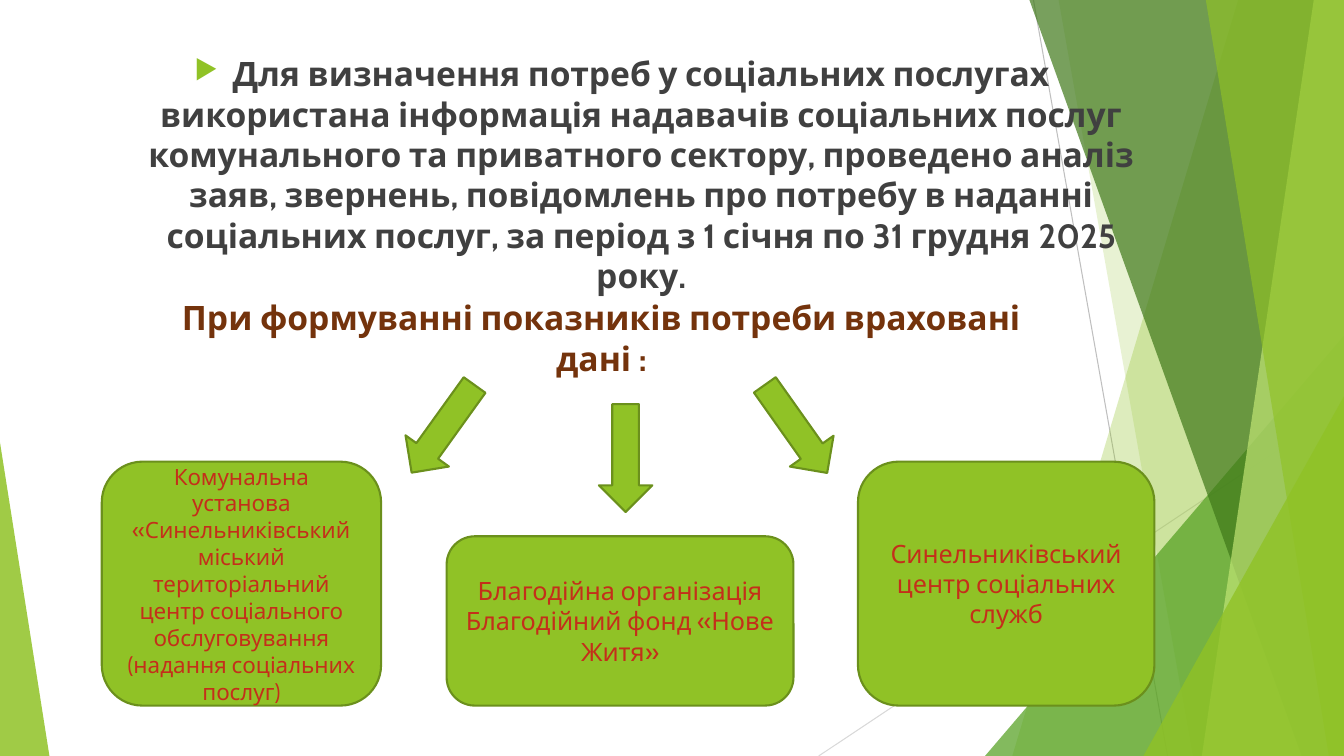
"""Builds a slide on the data sources used to assess social service needs."""
import pptx
import pptx.dml.color
import pptx.enum.shapes
import pptx.enum.text
import pptx.oxml
import pptx.oxml.ns
import pptx.util
from pptx.util import Inches

RGBColor = pptx.dml.color.RGBColor
MSO_SHAPE = pptx.enum.shapes.MSO_SHAPE
MSO_ANCHOR = pptx.enum.text.MSO_ANCHOR

GREEN = RGBColor(0x90, 0xC2, 0x26)
MID_GREEN = RGBColor(0x54, 0xA0, 0x21)
DARK_GREEN = RGBColor(0x3F, 0x78, 0x19)
PALE_GREEN = RGBColor(0xC0, 0xE4, 0x74)
OUTLINE = RGBColor(0x6B, 0x90, 0x1C)
GREY = RGBColor(0xBF, 0xBF, 0xBF)
LIGHT_GREY = RGBColor(0xD9, 0xD9, 0xD9)
BROWN = RGBColor(0x74, 0x33, 0x0C)
CHARCOAL = RGBColor(0x40, 0x40, 0x40)
RED = RGBColor(0xC4, 0x2F, 0x1A)

WIDTH, HEIGHT = 13.33, 7.5

deck = pptx.Presentation()
deck.slide_width, deck.slide_height = Inches(WIDTH), Inches(HEIGHT)
slide = deck.slides.add_slide(deck.slide_layouts[6])
shapes = slide.shapes


def write(holder, text, *, size, color, bold=False, anchor=MSO_ANCHOR.TOP):
    """Writes one centred paragraph and returns it."""
    frame = holder.text_frame
    frame.word_wrap = True
    frame.vertical_anchor = anchor
    paragraph = frame.paragraphs[0]
    paragraph.alignment = pptx.enum.text.PP_ALIGN.CENTER
    run = paragraph.add_run()
    run.text = text
    run.font.name = "Cabin"
    run.font.size = pptx.util.Pt(size)
    run.font.bold = bold
    run.font.color.rgb = color
    return paragraph


def paint(figure, color, opacity=100, outline=None):
    """Fills a shape, with an outline if a colour is given."""
    figure.shadow.inherit = False
    figure.fill.solid()
    figure.fill.fore_color.rgb = color
    if opacity < 100:
        tint = figure._element.spPr.find(".//" + pptx.oxml.ns.qn("a:srgbClr"))
        alpha = tint.makeelement(pptx.oxml.ns.qn("a:alpha"), {"val": str(opacity * 1000)})
        tint.append(alpha)
    if outline is None:
        figure.line.fill.background()
    else:
        figure.line.color.rgb = outline
        figure.line.width = pptx.util.Pt(1.5)


for start_x, start_y, end_x, end_y, color in [
    (10.25, 0, 11.58, HEIGHT, GREY),
    (WIDTH, 4.03, 8.12, HEIGHT, LIGHT_GREY),
]:
    ray = shapes.add_connector(
        pptx.enum.shapes.MSO_CONNECTOR.STRAIGHT,
        Inches(start_x), Inches(start_y), Inches(end_x), Inches(end_y))
    ray.line.color.rgb = color
    ray.line.width = pptx.util.Pt(0.75)
    properties = ray._element.spPr
    properties.append(properties.makeelement(pptx.oxml.ns.qn("a:effectLst"), {}))

BAND, TRIANGLE = "band", "triangle"
facets = [
    (BAND, (12.28, 10.04), GREEN, 30),
    (BAND, (10.5, 11.83), GREEN, 20),
    (TRIANGLE, (9.77, 3.33, 3.56, 1), MID_GREEN, 72),
    (BAND, (10.21, 12.91), DARK_GREEN, 70),
    (BAND, (13.03, 11.92), PALE_GREEN, 70),
    (BAND, (11.96, 13.18), GREEN, 65),
    (TRIANGLE, (11.34, 3.93, 1.99, 1), GREEN, 80),
    (TRIANGLE, (0, 4.39, 0.49, 0), GREEN, 85),
]
for kind, geometry, color, opacity in facets:
    if kind == BAND:
        top_x, bottom_x = geometry
        outline = shapes.build_freeform(Inches(top_x), 0)
        outline.add_line_segments([
            (Inches(WIDTH), 0),
            (Inches(WIDTH), Inches(HEIGHT)),
            (Inches(bottom_x), Inches(HEIGHT)),
        ])
        facet = outline.convert_to_shape()
    else:
        left, top, width, apex = geometry
        facet = shapes.add_shape(
            MSO_SHAPE.ISOSCELES_TRIANGLE,
            Inches(left), Inches(top), Inches(width), Inches(HEIGHT - top))
        facet.adjustments[0] = apex
    paint(facet, color, opacity)

heading = shapes.add_textbox(Inches(1.3), Inches(2.9), Inches(9.33), Inches(1.19))
write(heading, "При формуванні показників потреби враховані дані :",
      size=24, color=BROWN, bold=True)

summary = shapes.add_textbox(Inches(0.75), Inches(0.48), Inches(10.84), Inches(2.63))
statement = write(
    summary,
    "Для визначення потреб у соціальних послугах використана інформація "
    "надавачів соціальних послуг комунального та приватного сектору, проведено "
    "аналіз заяв, звернень, повідомлень про потребу в наданні соціальних послуг, "
    "за період з 1 січня по 31 грудня 2025 року.",
    size=24, color=CHARCOAL, bold=True)
bullet_format = statement._p.get_or_add_pPr()
bullet_format.set("marL", str(Inches(0.38)))
bullet_format.set("indent", str(Inches(-0.38)))
for bullet_xml in [
    f'<a:buClr {pptx.oxml.ns.nsdecls("a")}><a:srgbClr val="{GREEN}"/></a:buClr>',
    f'<a:buSzPct {pptx.oxml.ns.nsdecls("a")} val="80000"/>',
    f'<a:buChar {pptx.oxml.ns.nsdecls("a")} char="▶"/>',
]:
    bullet_format.append(pptx.oxml.parse_xml(bullet_xml))

BOXES_BOTTOM = 7
for left, top, width, size, provider in [
    (1.01, 4.58, 2.77, 16,
     "Комунальна установа «Синельниківський міський територіальний центр "
     "соціального обслуговування (надання соціальних послуг)"),
    (4.43, 5.32, 3.44, 18, "Благодійна організація Благодійний фонд «Нове Житя»"),
    (8.51, 4.58, 2.94, 18, "Синельниківський центр соціальних служб"),
]:
    provider_box = shapes.add_shape(
        MSO_SHAPE.ROUNDED_RECTANGLE,
        Inches(left), Inches(top), Inches(width), Inches(BOXES_BOTTOM - top))
    paint(provider_box, GREEN, outline=OUTLINE)
    write(provider_box, provider, size=size, color=RED, anchor=MSO_ANCHOR.MIDDLE)

for left, top, angle in [(5.94, 4.01, 0), (4.13, 3.72, 35.7), (7.63, 3.72, 324.7)]:
    arrow = shapes.add_shape(
        MSO_SHAPE.DOWN_ARROW, Inches(left), Inches(top), Inches(0.53), Inches(1.07))
    arrow.rotation = angle
    paint(arrow, GREEN, outline=OUTLINE)

deck.save("out.pptx")
